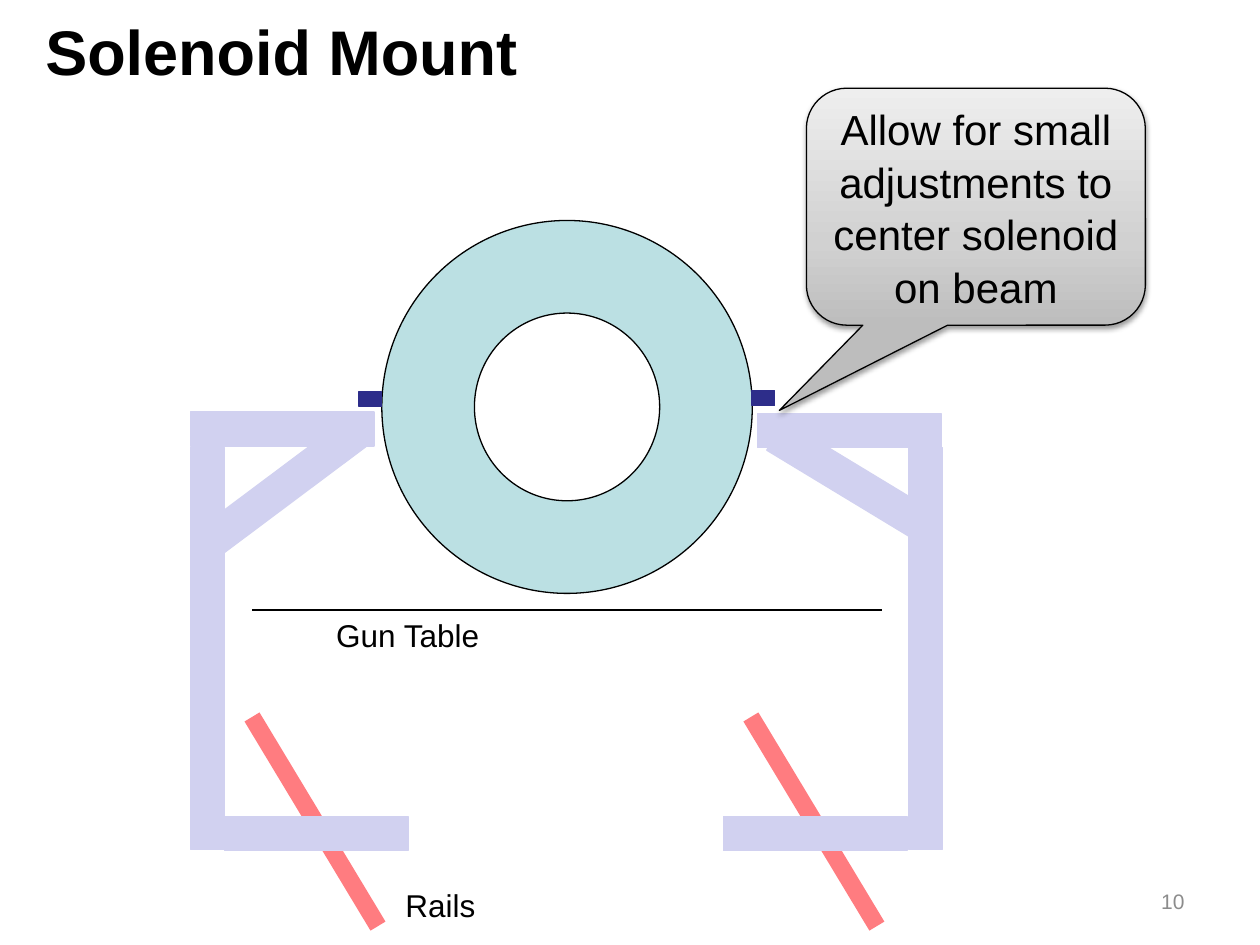
"""Build the solenoid mount slide."""
from copy import deepcopy
from typing import NamedTuple

from lxml import etree
from pptx import Presentation
from pptx.dml.color import RGBColor
from pptx.enum import shapes as es, text as et
from pptx.oxml import ns
from pptx.util import Pt

BLACK = RGBColor(0, 0, 0)
GRAY = RGBColor(0x8C, 0x8C, 0x8C)
RED = RGBColor(0xFF, 0x7C, 0x80)
TEAL = RGBColor(0xBB, 0xE0, 0xE3)
NAVY = RGBColor(0x2D, 0x2D, 0x8A)
LILAC = RGBColor(0xD1, 0xD1, 0xF0)
SHADES = (
    (0, RGBColor(0xBD, 0xBD, 0xBD)),
    (0.35, RGBColor(0xD1, 0xD1, 0xD1)),
    (1, RGBColor(0xEE, 0xEE, 0xEE)),
)
KIND = es.MSO_SHAPE
ALIGN = et.PP_ALIGN
ANCHOR = et.MSO_ANCHOR
LONG, THICK, TALL = 105, 19.5, 229.7


class Box(NamedTuple):
    x: float
    y: float
    w: float
    h: float
    turn: float = 0


class Label(NamedTuple):
    words: str
    box: Box
    size: float
    color: RGBColor = BLACK
    align: ALIGN = ALIGN.LEFT
    anchor: ANCHOR = ANCHOR.TOP
    wrap: bool = False


PINS = (Box(429.8, 223.2, 13, 8.6), Box(205.2, 223.9, 13, 8.6))
FRAME = (
    Box(432.7, 236.2, LONG, THICK),
    Box(519.1, 255.6, THICK, TALL),
    Box(108.7, 255.6, THICK, TALL),
    Box(108.7, 235.4, LONG, THICK),
    Box(413.3, 466.6, LONG, THICK),
    Box(128.2, 466.6, LONG, THICK),
    Box(435.6, 266.4, LONG, THICK, 31.2),
    Box(109.4, 268.6, LONG, THICK, 143.2),
)
LABELS = (
    Label("Gun Table", Box(185, 348.5, 97.2, 28.8), 18),
    Label("Rails", Box(224.6, 502.6, 54.7, 28.8), 18),
    Label("10", Box(516.2, 500.4, 167.8, 28.8), 12, GRAY,
          ALIGN.RIGHT, ANCHOR.MIDDLE, True),
)


def style(frame, size: float, color: RGBColor, align: ALIGN, bold: bool = False) -> None:
    for para in frame.paragraphs:
        para.alignment = align
        for run in para.runs:
            font = run.font
            font.name, font.size, font.bold = "Arial", Pt(size), bold
            font.color.rgb = color


def place(shape, box: Box) -> None:
    shape.left, shape.top = Pt(box.x), Pt(box.y)
    shape.width, shape.height = Pt(box.w), Pt(box.h)


def add_part(slide, kind: KIND, box: Box, fill: RGBColor, edge: RGBColor):
    part = slide.shapes.add_shape(kind, *map(Pt, box[:4]))
    part.rotation = box.turn
    part.shadow.inherit = False
    part.fill.solid()
    part.fill.fore_color.rgb = fill
    part.line.color.rgb = edge
    part.line.width = Pt(0.75)
    return part


def add_line(slide, ends: tuple, color: RGBColor, width: float) -> None:
    line = slide.shapes.add_connector(es.MSO_CONNECTOR.STRAIGHT, *map(Pt, ends))
    line.line.color.rgb = color
    line.line.width = Pt(width)
    etree.SubElement(line.element.spPr, ns.qn("a:effectLst"))


def add_label(slide, label: Label) -> None:
    frame = slide.shapes.add_textbox(*map(Pt, label.box[:4])).text_frame
    frame.text = label.words
    frame.word_wrap = label.wrap
    frame.vertical_anchor = label.anchor
    style(frame, label.size, label.color, label.align)


def add_title(slide, words: str) -> None:
    title = slide.shapes.title
    place(title, Box(18.7, 0, 701.3, 69.1))
    frame = title.text_frame
    frame.text = words
    frame.vertical_anchor = ANCHOR.TOP
    frame.margin_top = Pt(7.2)
    style(frame, 36, BLACK, ALIGN.LEFT, True)


def shade(shape) -> None:
    shape.fill.gradient()
    shape.fill.gradient_angle = 90
    stops = shape.element.spPr.find(ns.qn("a:gradFill")).find(ns.qn("a:gsLst"))
    stops.insert(1, deepcopy(stops[0]))
    for stop, (pos, color) in zip(shape.fill.gradient_stops, SHADES):
        stop.position = pos
        stop.color.rgb = color


def cast(shape) -> None:
    effects = shape.element.spPr.find(ns.qn("a:effectLst"))
    shadow = etree.SubElement(
        effects, ns.qn("a:outerShdw"), blurRad=str(Pt(3.1)), dist=str(Pt(1.6)),
        dir="5400000", rotWithShape="0")
    color = etree.SubElement(shadow, ns.qn("a:srgbClr"), val=str(BLACK))
    etree.SubElement(color, ns.qn("a:alpha"), val="38000")


def add_bubble(slide, words: str) -> None:
    bubble = add_part(slide, KIND.ROUNDED_RECTANGULAR_CALLOUT,
                      Box(460.8, 50.4, 193.7, 135.4), GRAY, BLACK)
    for i, value in enumerate((-0.58, 0.86, 0.17)):
        bubble.adjustments[i] = value
    shade(bubble)
    cast(bubble)
    frame = bubble.text_frame
    frame.text = words
    frame.word_wrap = True
    frame.vertical_anchor = ANCHOR.MIDDLE
    frame.paragraphs[0].line_spacing = 1.04
    style(frame, 24, BLACK, ALIGN.CENTER)


def main() -> None:
    deck = Presentation()
    deck.slide_width, deck.slide_height = Pt(720), Pt(540)
    slide = deck.slides.add_slide(deck.slide_layouts[5])
    add_title(slide, "Solenoid Mount")
    for x in (429.1, 144):
        add_line(slide, (x, 409.7, x + 72, 529.2), RED, 10)
    add_part(slide, KIND.DONUT, Box(218.2, 126, 211.7, 213.1), TEAL, BLACK)
    add_line(slide, (144, 348.5, 504, 348.5), BLACK, 0.75)
    for boxes, color in ((PINS, NAVY), (FRAME, LILAC)):
        for box in boxes:
            add_part(slide, KIND.RECTANGLE, box, color, color)
    for label in LABELS:
        add_label(slide, label)
    add_bubble(slide, "Allow for small adjustments to center solenoid on beam")
    deck.save("out.pptx")


if __name__ == "__main__":
    main()
